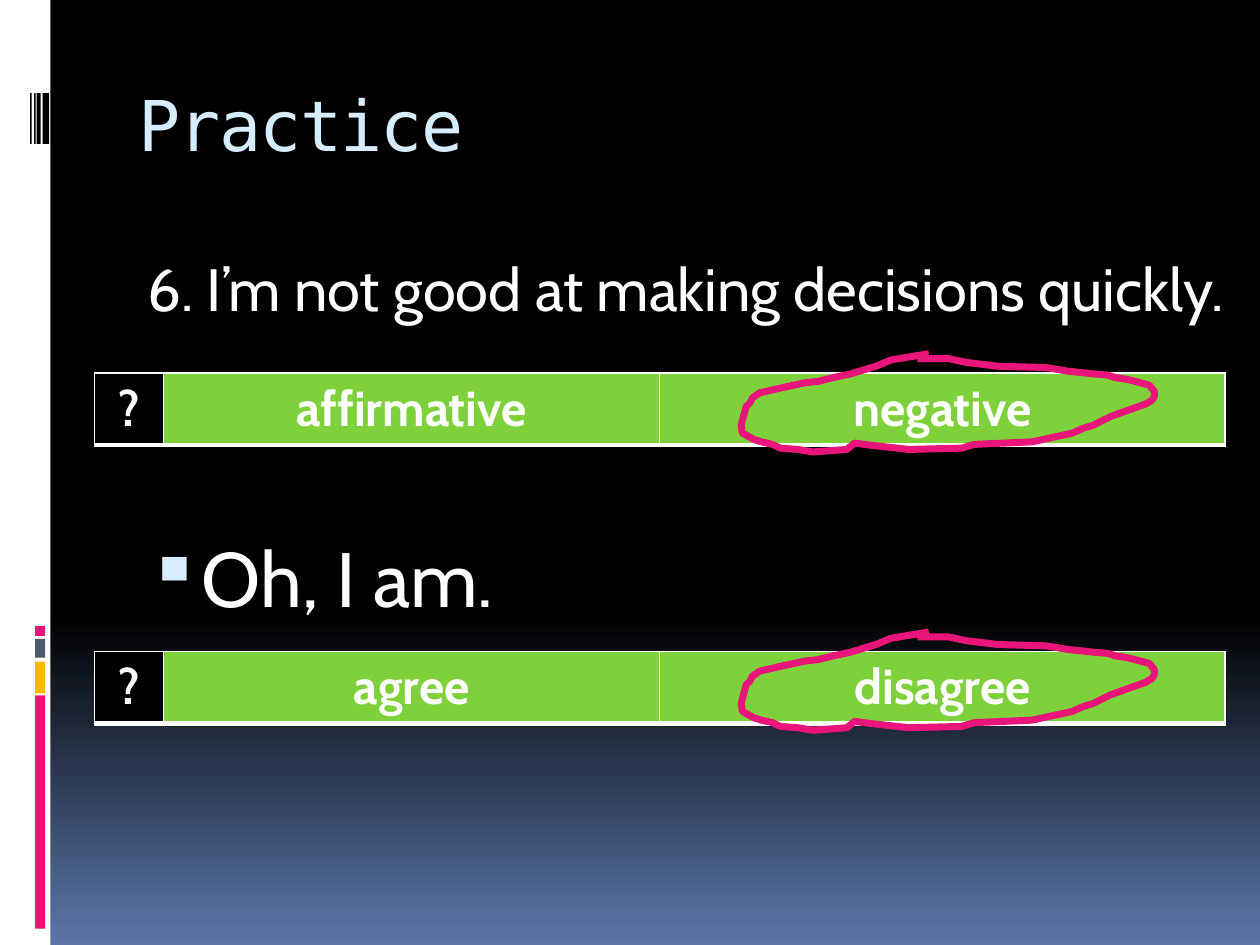
from dataclasses import dataclass

from lxml.etree import SubElement
from pptx import Presentation
from pptx.dml.color import RGBColor
from pptx.enum.shapes import MSO_SHAPE
from pptx.enum.text import MSO_ANCHOR, PP_ALIGN
from pptx.oxml.ns import qn
from pptx.slide import Slide
from pptx.util import Cm, Pt

HUES = {
    "black": "000000", "white": "FFFFFF", "pink": "EA157A", "gold": "FEB80A",
    "slate": "4E5B6F", "green": "7FD13B", "pale": "D6ECFF", "dusk": "5B77A8",
}
FONT = "Cabin"
COLS = (1.4, 10.0, 11.4)
EDGES = {"a:lnL": 1, "a:lnR": 1, "a:lnT": 1, "a:lnB": 3}

# Pen stroke round an answer, in hundredths of an inch from its own corner
LOOP = [
    (149, 0), (119, 5), (107, 10), (87, 16), (73, 19), (61, 22), (51, 23),
    (42, 25), (28, 28), (24, 29), (15, 31), (9, 35), (7, 39), (4, 42),
    (1, 53), (0, 57), (1, 63), (10, 68), (16, 70), (25, 72), (31, 75),
    (45, 76), (57, 78), (84, 76), (90, 71), (106, 73), (133, 76), (175, 75),
    (185, 72), (231, 70), (263, 63), (272, 59), (279, 57), (293, 50),
    (304, 46), (321, 40), (326, 37), (328, 34), (328, 30), (324, 25),
    (309, 21), (304, 20), (297, 19), (291, 17), (279, 16), (270, 15),
    (260, 14), (242, 11), (204, 10), (179, 7), (165, 4), (140, 4),
]


@dataclass
class Bar:
    x: float
    y: float
    w: float
    h: float
    hue: str


@dataclass
class Task:
    line: str
    size: float
    text_y: float
    wide: float
    dot: bool
    row_y: float
    words: tuple[str, str]


BARS = [Bar(0, 0, 1.02, 19.05, "white")]
BARS += [Bar(0.71, y, 0.2, h, hue) for y, h, hue in (
    (14.02, 4.7, "pink"), (13.34, 0.64, "gold"),
    (12.88, 0.38, "slate"), (12.62, 0.2, "pink"))]
BARS += [Bar(x, 1.88, w, 1.02, "black") for x, w in (
    (0.86, 0.13), (0.74, 0.08), (0.69, 0.03), (0.61, 0.03))]

TASKS = [
    Task("6. I’m not good at making decisions quickly.", 34.1, 4.95, 22.56,
         False, 7.52, ("affirmative", "negative")),
    Task("Oh, I am.", 44, 10.57, 21.6, True, 13.13, ("agree", "disagree")),
]


def rgb(hue: str) -> RGBColor:
    return RGBColor.from_string(HUES[hue])


def style(para, size: float, hue: str = "white", face: str = FONT,
          bold: bool = False) -> None:
    for run in para.runs:
        run.font.size, run.font.name, run.font.bold = Pt(size), face, bold
        run.font.color.rgb = rgb(hue)


def paint_back(slide: Slide) -> None:
    fill = slide.background.fill
    fill.gradient()
    fill.gradient_angle = 270
    for stop, place, hue in zip(fill.gradient_stops, (0.65, 1), ("black", "dusk")):
        stop.position = place
        stop.color.rgb = rgb(hue)


def add_bar(slide: Slide, bar: Bar) -> None:
    shape = slide.shapes.add_shape(
        MSO_SHAPE.RECTANGLE, Cm(bar.x), Cm(bar.y), Cm(bar.w), Cm(bar.h))
    shape.shadow.inherit = False
    shape.fill.solid()
    shape.fill.fore_color.rgb = rgb(bar.hue)
    shape.line.fill.background()


def set_title(slide: Slide, text: str) -> None:
    title = slide.shapes.title
    title.left, title.top, title.width, title.height = (
        Cm(2.54), Cm(1.42), Cm(21.6), Cm(2.54))
    frame = title.text_frame
    frame.text = text
    frame.vertical_anchor = MSO_ANCHOR.TOP
    frame.margin_top = Cm(0.23)
    para = frame.paragraphs[0]
    para.alignment = PP_ALIGN.LEFT
    style(para, 40, "pale", "DejaVu Sans Mono")
    para.runs[0].font._element.set("spc", "-100")


def add_line(slide: Slide, task: Task) -> None:
    box = slide.shapes.add_textbox(
        Cm(2.54), Cm(task.text_y), Cm(task.wide), Cm(2.57))
    frame = box.text_frame
    frame.word_wrap = True
    frame.text = task.line
    para = frame.paragraphs[0]
    para.space_before = Pt(7)
    style(para, task.size)
    props = para._p.get_or_add_pPr()
    props.set("marL", str(Cm(1.14 if task.dot else 0.18)))
    props.set("indent", str(Cm(-0.96 if task.dot else 0)))
    if task.dot:
        tint = SubElement(props, qn("a:buClr"))
        SubElement(tint, qn("a:srgbClr"), val=HUES["pale"])
        SubElement(props, qn("a:buSzPct"), val="95000")
        SubElement(props, qn("a:buChar"), char="▪")


def add_edges(cell) -> None:
    """Draw white cell borders, placed ahead of the cell's fill."""
    props = cell._tc.get_or_add_tcPr()
    for spot, (tag, width) in enumerate(EDGES.items()):
        edge = SubElement(props, qn(tag), w=str(Pt(width)))
        fill = SubElement(edge, qn("a:solidFill"))
        SubElement(fill, qn("a:srgbClr"), val=HUES["white"])
        props.insert(spot, edge)


def add_row(slide: Slide, task: Task) -> None:
    table = slide.shapes.add_table(
        1, len(COLS), Cm(1.9), Cm(task.row_y), Cm(sum(COLS)), Cm(1.45)).table
    for col, wide in zip(table.columns, COLS):
        col.width = Cm(wide)
    words = ("?", *task.words)
    for cell, word, hue in zip(table.rows[0].cells, words, ("black", "green", "green")):
        cell.text_frame.text = word
        para = cell.text_frame.paragraphs[0]
        para.alignment = PP_ALIGN.CENTER
        style(para, 28, bold=True)
        cell.fill.solid()
        cell.fill.fore_color.rgb = rgb(hue)
        add_edges(cell)


def add_loop(slide: Slide, task: Task) -> None:
    pen = slide.shapes.build_freeform(*LOOP[0], scale=Cm(0.0254))
    pen.add_line_segments(LOOP[1:], close=False)
    shape = pen.convert_to_shape(Cm(14.94), Cm(task.row_y - 0.39))
    shape.shadow.inherit = False
    shape.fill.background()
    shape.line.color.rgb = rgb("pink")
    shape.line.width = Pt(4)


def main() -> None:
    deck = Presentation()
    deck.slide_width, deck.slide_height = Cm(25.4), Cm(19.05)
    slide = deck.slides.add_slide(deck.slide_layouts[5])
    paint_back(slide)
    for bar in BARS:
        add_bar(slide, bar)
    set_title(slide, "Practice")
    for task in TASKS:
        add_line(slide, task)
        add_row(slide, task)
        add_loop(slide, task)
    deck.save("out.pptx")


if __name__ == "__main__":
    main()
